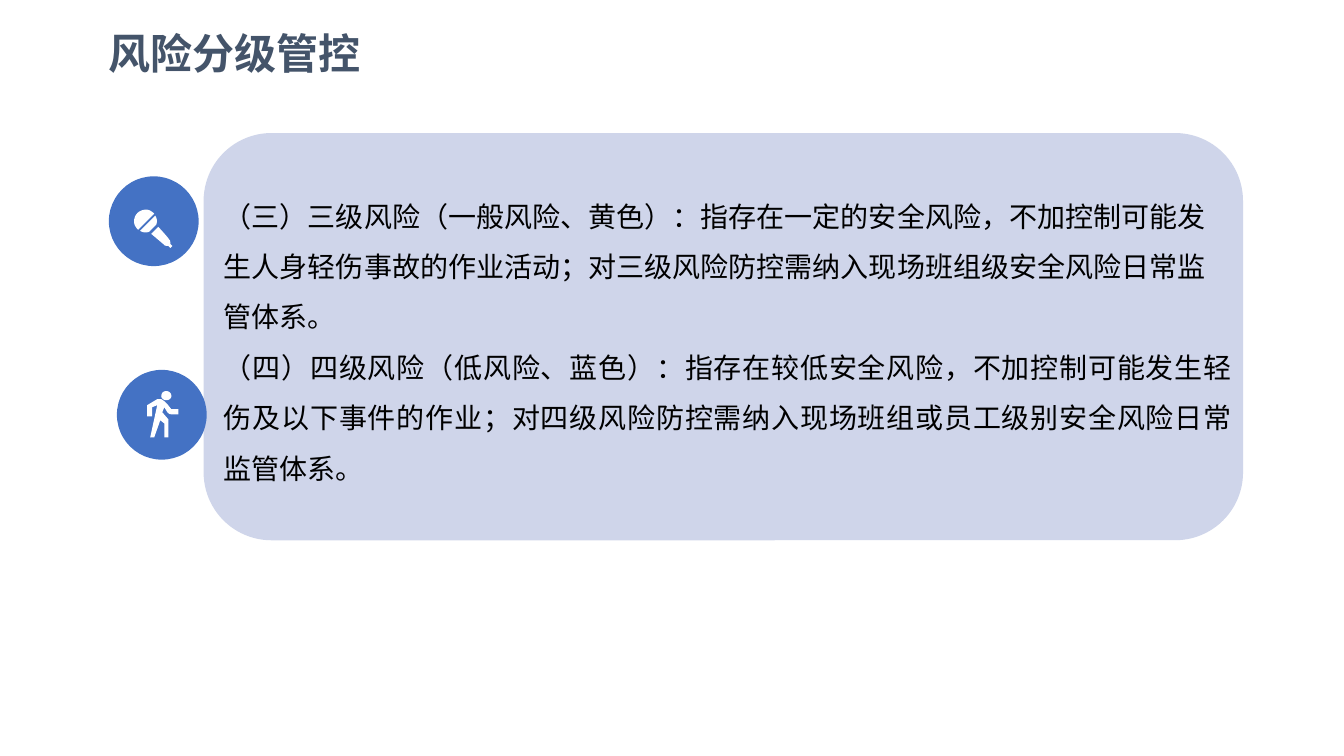
from dataclasses import dataclass

from lxml.etree import SubElement
from pptx import Presentation
from pptx.dml.color import RGBColor
from pptx.enum.lang import MSO_LANGUAGE_ID as Language
from pptx.enum.shapes import MSO_SHAPE as Preset
from pptx.enum.text import MSO_ANCHOR as Anchor, MSO_AUTO_SIZE as AutoSize, PP_ALIGN as Align
from pptx.oxml.ns import qn
from pptx.util import Inches, Pt


@dataclass(frozen=True)
class Theme:
    """Colours, fonts and type sizes of the slide."""
    panel: str = "CFD5EA"
    disc: str = "4472C4"
    icon: str = "FFFFFF"
    title: str = "44546A"
    ink: str = "000000"
    latin: str = "Arial"
    chinese: str = "Noto Sans CJK SC"
    title_size: int = 30
    body_size: int = 20


DISC_SHARE = 6.68
ICON_GRID = 89
FINE = 100

MICROPHONE = [
    [(47, 48), (48, 45, 48, 42, 46, 39), (31, 54), (34, 56, 37, 56, 40, 55)],
    [(45, 37), (43, 35, 40, 33, 37, 33), (30, 33, 25, 38, 25, 45), (25, 48, 27, 51, 29, 53)],
    [(61, 67), (61, 67, 61, 63, 60, 63), (60, 62, 49, 50, 49, 50), (42, 57), (55, 68),
     (55, 69, 59, 69, 59, 69), (61, 71), (63, 69)],
]
WALKER = [
    [(47, 37), (50, 42), (51, 43, 52, 44, 54, 44), (61, 44), (61, 39), (54, 39), (50, 34),
     (49, 33, 48, 32, 47, 31), (44, 29), (43, 29, 43, 29, 42, 29), (41, 29, 41, 29, 40, 29),
     (30, 35), (30, 46), (35, 46), (35, 37), (40, 35), (33, 67), (37, 67), (43, 50), (47, 53),
     (47, 67), (51, 67), (51, 49), (45, 42)],
    [(49, 30), (52, 30, 54, 28, 54, 26), (54, 23, 52, 21, 49, 21),
     (46, 21, 44, 23, 44, 26), (44, 28, 46, 30, 49, 30)],
]
RISK_LEVELS = [
    ("（三）三级风险（一般风险、黄色）：指存在一定的安全风险，不加控制可能发生人身轻伤事故的作业活动；"
     "对三级风险防控需纳入现场班组级安全风险日常监管体系。", Align.LEFT),
    ("（四）四级风险（低风险、蓝色）：指存在较低安全风险，不加控制可能发生轻伤及以下事件的作业；"
     "对四级风险防控需纳入现场班组或员工级别安全风险日常监管体系。", Align.JUSTIFY),
]


def flatten(outline, steps=8):
    """Turn corners and cubic curves into a list of fine grid points."""
    points = [outline[0]]
    for segment in outline[1:]:
        if len(segment) == 2:
            points.append(segment)
            continue
        knots = [points[-1], segment[:2], segment[2:4], segment[4:]]
        for step in range(1, steps + 1):
            t = step / steps
            weights = ((1 - t) ** 3, 3 * t * (1 - t) ** 2, 3 * t * t * (1 - t), t ** 3)
            points.append(tuple(sum(w * knot[axis] for w, knot in zip(weights, knots))
                                for axis in (0, 1)))
    return [(round(x * FINE), round(y * FINE)) for x, y in points]


class RiskPage:
    """Draws elements on one slide, placed by percent of its size."""

    def __init__(self, deck, theme):
        """Add a title-only slide to the deck."""
        self.deck, self.theme = deck, theme
        self.page = deck.slides.add_slide(deck.slide_layouts[5])

    def across(self, share):
        """Return a percentage of the slide width."""
        return round(self.deck.slide_width * share / 100)

    def down(self, share):
        """Return a percentage of the slide height."""
        return round(self.deck.slide_height * share / 100)

    def place(self, left, top, width, height):
        """Return a frame given in percent as lengths."""
        return self.across(left), self.down(top), self.across(width), self.down(height)

    def paint(self, shape, colour):
        """Give a shape a flat fill without line or shadow."""
        shape.shadow.inherit = False
        shape.fill.solid()
        shape.fill.fore_color.rgb = RGBColor.from_string(colour)
        shape.line.fill.background()

    def panel(self, *frame):
        """Draw the rounded panel behind the text."""
        self.paint(self.page.shapes.add_shape(Preset.ROUNDED_RECTANGLE, *self.place(*frame)),
                   self.theme.panel)

    def badge(self, left, top, outlines):
        """Draw a disc with an icon on it."""
        x, y, size = self.across(left), self.down(top), self.across(DISC_SHARE)
        self.paint(self.page.shapes.add_shape(Preset.OVAL, x, y, size, size), self.theme.disc)
        contours = [flatten(outline) for outline in outlines]
        builder = self.page.shapes.build_freeform(*contours[0][0], scale=size / ICON_GRID / FINE)
        for index, contour in enumerate(contours):
            if index:
                builder.move_to(*contour[0])
            builder.add_line_segments(contour[1:], close=True)
        self.paint(builder.convert_to_shape(x, y), self.theme.icon)

    def frame_text(self, box, margins, anchor):
        """Set wrapping, insets and anchor of a text frame."""
        frame = box.text_frame
        frame.word_wrap, frame.auto_size, frame.vertical_anchor = True, AutoSize.NONE, anchor
        (frame.margin_left, frame.margin_top,
         frame.margin_right, frame.margin_bottom) = map(Inches, margins)
        return frame

    def add_text(self, para, text, size, colour, latin, spacing, align=Align.LEFT, bold=False):
        """Add one styled run to a paragraph."""
        para.alignment, para.line_spacing = align, spacing
        span = para.add_run()
        span.text = text
        font = span.font
        font.size, font.bold, font.name = Pt(size), bold, latin
        font.color.rgb = RGBColor.from_string(colour)
        font.language_id = Language.SIMPLIFIED_CHINESE
        SubElement(font._element, qn("a:ea")).set("typeface", self.theme.chinese)

    def title(self, text, *frame):
        """Place and fill the title placeholder."""
        box = self.page.shapes.title
        box.left, box.top, box.width, box.height = self.place(*frame)
        para = self.frame_text(box, (0.14, 0.14, 0.06, 0.14), Anchor.MIDDLE).paragraphs[0]
        self.add_text(para, text, self.theme.title_size, self.theme.title,
                      self.theme.chinese, 1.4, bold=True)

    def body(self, items, *frame):
        """Fill a text box with paragraphs."""
        box = self.page.shapes.add_textbox(*self.place(*frame))
        text_frame = self.frame_text(box, (0.12, 0.06, 0.12, 0.06), Anchor.TOP)
        for index, (text, align) in enumerate(items):
            para = text_frame.add_paragraph() if index else text_frame.paragraphs[0]
            self.add_text(para, text, self.theme.body_size, self.theme.ink,
                          self.theme.latin, 1.5, align)


def main():
    """Build and save the slide."""
    deck = Presentation()
    deck.slide_width, deck.slide_height = Inches(13.33), Inches(7.5)
    slide = RiskPage(deck, Theme())
    slide.title("风险分级管控", 7.05, -1.07, 92.2, 13.33)
    slide.panel(15.15, 17.6, 77.34, 53.87)
    slide.badge(8.7, 48.93, WALKER)
    slide.badge(8.1, 23.33, MICROPHONE)
    slide.body(RISK_LEVELS, 15.75, 23.33, 76.82, 38.8)
    deck.save("out.pptx")


if __name__ == "__main__":
    main()
